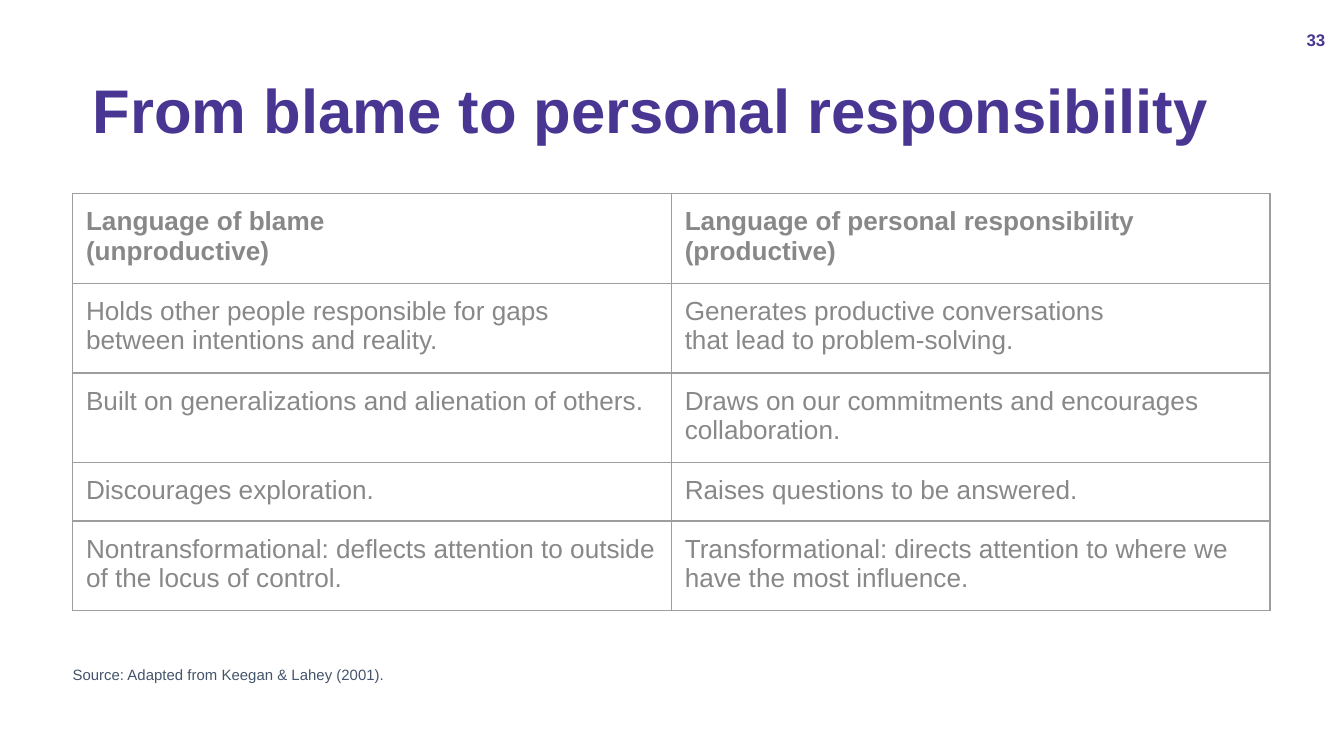
import pptx
import pptx.dml.color
import pptx.enum.text
import pptx.oxml
import pptx.oxml.ns
import pptx.util
from pptx.util import Inches

PURPLE = "483692"
GRAY = "888888"
SLATE = "44546A"
BORDER = "9E9E9E"
WHITE = "FFFFFF"
SLIDE_WIDTH = 10
ROW_HEIGHT = 0.42

COMPARISON = [
    ("Language of blame\n(unproductive)",
     "Language of personal responsibility\n(productive)"),
    ("Holds other people responsible for gaps\nbetween intentions and reality.",
     "Generates productive conversations\nthat lead to problem-solving."),
    ("Built on generalizations and alienation of others.",
     "Draws on our commitments and encourages collaboration."),
    ("Discourages exploration.",
     "Raises questions to be answered."),
    ("Nontransformational: deflects attention to outside of the locus of control.",
     "Transformational: directs attention to where we have the most influence."),
]


def color(value):
    return pptx.dml.color.RGBColor.from_string(value)


def write_text(frame, text, size, fill, bold=False, align="LEFT", line_spacing=None):
    frame.text = text
    for paragraph in frame.paragraphs:
        paragraph.alignment = getattr(pptx.enum.text.PP_ALIGN, align)
        paragraph.line_spacing = line_spacing
        for run in paragraph.runs:
            run.font.name = "Arial"
            run.font.size = pptx.util.Pt(size)
            run.font.bold = bold
            run.font.color.rgb = color(fill)


def add_text(slide, box, text, left_inset=0, anchor="TOP", **text_format):
    frame = slide.shapes.add_textbox(*map(Inches, box)).text_frame
    frame.word_wrap = True
    frame.margin_left = Inches(left_inset)
    frame.margin_right = Inches(0.07)
    frame.margin_top = frame.margin_bottom = Inches(0.04)
    frame.vertical_anchor = getattr(pptx.enum.text.MSO_ANCHOR, anchor)
    write_text(frame, text, **text_format)


def add_borders(cell, fill, width):
    properties = cell._tc.get_or_add_tcPr()
    for side in "LRTB":
        properties.append(pptx.oxml.parse_xml(
            f'<a:ln{side} {pptx.oxml.ns.nsdecls("a")} w="{pptx.util.Pt(width)}">'
            f'<a:solidFill><a:srgbClr val="{fill}"/></a:solidFill></a:ln{side}>'))


def add_comparison_table(slide, box, rows):
    shape = slide.shapes.add_table(len(rows), len(rows[0]), *map(Inches, box))
    table = shape.table
    table.first_row = table.horz_banding = False
    for row_index, texts in enumerate(rows):
        table.rows[row_index].height = Inches(ROW_HEIGHT)
        for column_index, text in enumerate(texts):
            cell = table.cell(row_index, column_index)
            cell.margin_left = cell.margin_right = Inches(0.1)
            cell.margin_top = cell.margin_bottom = Inches(0.1)
            add_borders(cell, BORDER, 0.75)
            cell.fill.solid()
            cell.fill.fore_color.rgb = color(WHITE)
            write_text(cell.text_frame, text, size=14, fill=GRAY, bold=row_index == 0)
    shape.height = Inches(box[3])


def main():
    presentation = pptx.Presentation()
    presentation.slide_width = Inches(SLIDE_WIDTH)
    presentation.slide_height = Inches(SLIDE_WIDTH * 9 / 16)
    slide = presentation.slides.add_slide(presentation.slide_layouts[6])
    add_text(slide, (0.69, 0.3, 8.62, 1.09), "From blame to personal responsibility",
             anchor="MIDDLE", size=33, fill=PURPLE, bold=True, line_spacing=0.9)
    add_comparison_table(slide, (0.54, 1.44, 8.91, 3.1), COMPARISON)
    add_text(slide, (9.51, 0.15, 0.42, 0.3), "33", left_inset=0.07,
             anchor="MIDDLE", size=9, fill=PURPLE, bold=True, align="RIGHT")
    add_text(slide, (0.54, 4.93, 4.24, 0.51), "Source: Adapted from Keegan & Lahey (2001).",
             size=8, fill=SLATE, line_spacing=0.9)
    presentation.save("out.pptx")


if __name__ == "__main__":
    main()
